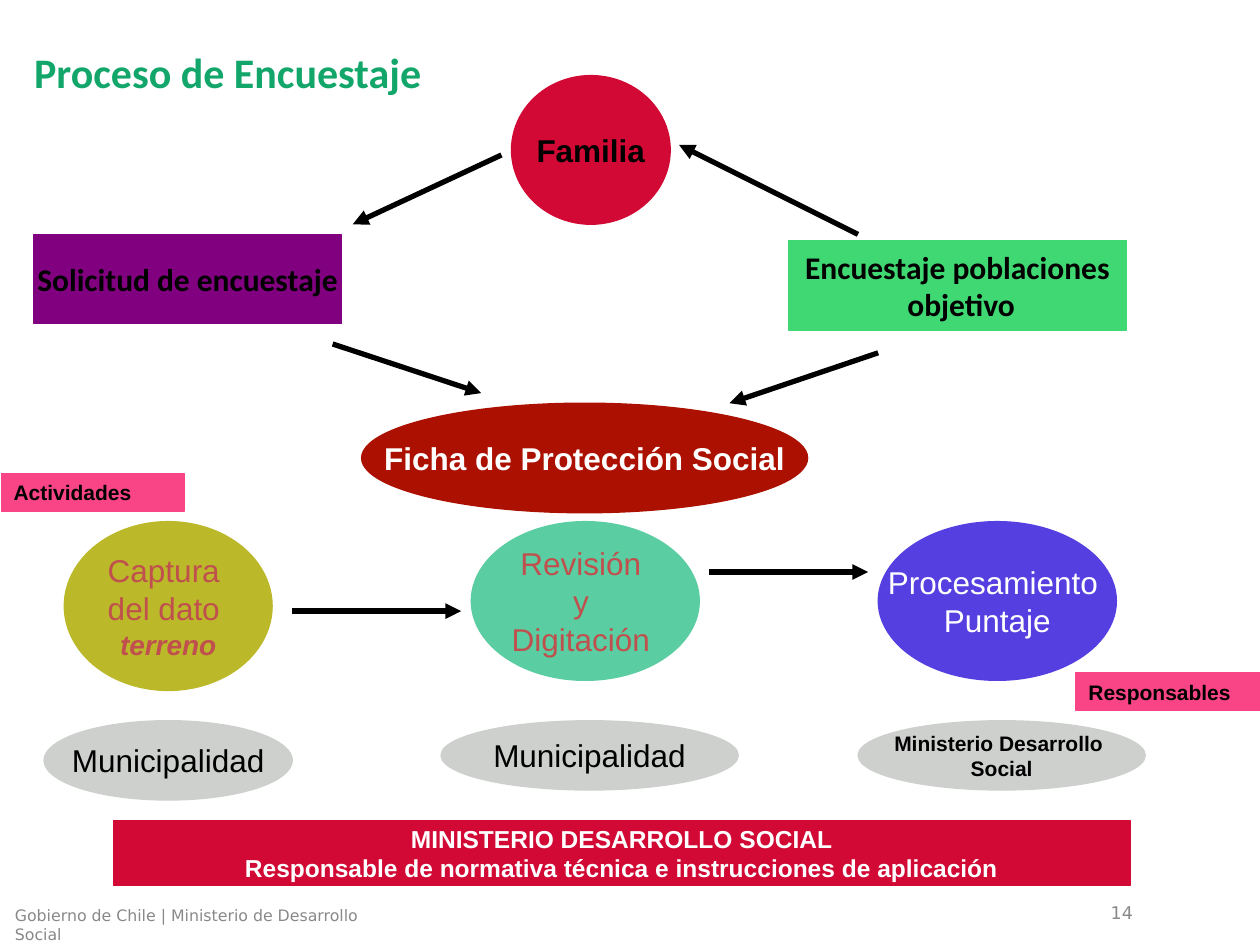
import lxml.etree
import pptx
import pptx.dml.color
import pptx.enum.shapes
import pptx.enum.text
import pptx.oxml.ns
import pptx.util
from pptx.util import Inches

ALIGN = pptx.enum.text.PP_ALIGN
ANCHOR = pptx.enum.text.MSO_ANCHOR
SHAPES = pptx.enum.shapes.MSO_SHAPE


def color(hex_string):
    return pptx.dml.color.RGBColor.from_string(hex_string)


def write(shape, lines, size, font, text_color, bold=False, align=ALIGN.CENTER,
          anchor=ANCHOR.MIDDLE, wrap=False):
    frame = shape.text_frame
    frame.word_wrap = wrap
    frame.vertical_anchor = anchor
    for index, line in enumerate(lines):
        paragraph = frame.add_paragraph() if index else frame.paragraphs[0]
        paragraph.alignment = align
        run = paragraph.add_run()
        run.text = line
        run.font.size = pptx.util.Pt(size)
        run.font.name = font
        run.font.bold = bold
        run.font.color.rgb = color(text_color)


presentation = pptx.Presentation()
presentation.slide_width = Inches(10)
presentation.slide_height = Inches(7.5)
slide = presentation.slides.add_slide(presentation.slide_layouts[5])

footer = slide.shapes.add_textbox(Inches(0.02), Inches(7.14), Inches(3.17), Inches(0.27))
write(footer, ["Gobierno de Chile | Ministerio de Desarrollo Social"], 9, "DejaVu Sans",
      "898989", align=ALIGN.LEFT, anchor=ANCHOR.TOP, wrap=True)
page_number = slide.shapes.add_textbox(Inches(6.76), Inches(7.14), Inches(2.33), Inches(0.21))
write(page_number, ["14"], 10, "DejaVu Sans", "898989", align=ALIGN.RIGHT, wrap=True)

title = slide.shapes.title
title.left, title.top = Inches(0.17), Inches(0.32)
title.width, title.height = Inches(8.93), Inches(0.51)
write(title, ["Proceso de Encuestaje"], 24, "Calibri", "12A66A", bold=True,
      align=ALIGN.LEFT, anchor=ANCHOR.TOP, wrap=True)

oval, box = SHAPES.OVAL, SHAPES.RECTANGLE
nodes = [
    (box, 0.27, 1.86, 2.44, 0.71, "800080",
     ["Solicitud de encuestaje"], 18, "Calibri", "000000", True),
    (oval, 2.87, 3.2, 3.54, 0.87, "AC1000",
     ["Ficha de Protección Social"], 18, "Arial", "FFFFFF", True),
    (oval, 0.51, 4.14, 1.65, 1.34, "BBB82A",
     ["Captura ", "del dato ", "terreno"], 18, "Arial", "C0504D", False),
    (oval, 3.74, 4.14, 1.81, 1.26, "5BCDA2",
     ["Revisión ", "y ", "Digitación "], 18, "Arial", "C0504D", False),
    (oval, 6.97, 4.14, 1.89, 1.26, "563FE1",
     ["Procesamiento ", "Puntaje"], 18, "Arial", "FFFFFF", False),
    (oval, 0.35, 5.72, 1.97, 0.63, "CED0CE",
     ["Municipalidad"], 18, "Arial", "000000", False),
    (oval, 3.5, 5.72, 2.36, 0.55, "CED0CE",
     ["Municipalidad"], 18, "Arial", "000000", False),
    (oval, 6.81, 5.72, 2.28, 0.55, "CED0CE",
     ["Ministerio Desarrollo ", "Social"], 12, "Arial", "000000", True),
    (box, 0.9, 6.51, 8.07, 0.52, "D10934",
     ["MINISTERIO DESARROLLO SOCIAL",
      "Responsable de normativa técnica e instrucciones de aplicación"],
     14, "Arial", "FFFFFF", True),
    (oval, 4.06, 0.6, 1.26, 1.18, "D10934",
     ["Familia"], 18, "Arial", "000000", True),
    (box, 6.26, 1.91, 2.68, 0.71, "40D873",
     ["Encuestaje poblaciones", " objetivo"], 18, "Calibri", "000000", True),
    (box, 0.01, 3.76, 1.45, 0.3, "F94585",
     ["Actividades"], 12, "Arial", "000000", True),
    (box, 8.54, 5.34, 1.46, 0.3, "F94585",
     ["Responsables"], 12, "Arial", "000000", True),
]
for kind, left, top, width, height, fill, lines, size, font, text_color, bold in nodes:
    node = slide.shapes.add_shape(
        kind, Inches(left), Inches(top), Inches(width), Inches(height))
    node.shadow.inherit = False
    node.fill.solid()
    node.fill.fore_color.rgb = color(fill)
    node.line.color.rgb = color(fill)
    node.line.width = pptx.util.Pt(0.75)
    is_label = fill == "F94585"
    write(node, lines, size, font, text_color, bold, wrap=is_label,
          align=ALIGN.LEFT if is_label else ALIGN.CENTER)
    if lines[-1] == "terreno":
        place_font = node.text_frame.paragraphs[-1].runs[0].font
        place_font.size = pptx.util.Pt(16)
        place_font.bold = place_font.italic = True

arrows = [
    (3.98, 1.23, 2.8, 1.78),
    (6.81, 1.86, 5.39, 1.15),
    (2.64, 2.73, 3.82, 3.12),
    (6.97, 2.8, 5.79, 3.2),
    (2.32, 4.85, 3.66, 4.85),
    (5.63, 4.54, 6.89, 4.54),
]
for points in arrows:
    arrow = slide.shapes.add_connector(
        pptx.enum.shapes.MSO_CONNECTOR.STRAIGHT, *[Inches(point) for point in points])
    arrow.line.color.rgb = color("000000")
    arrow.line.width = pptx.util.Pt(3)
    tail = lxml.etree.SubElement(arrow.line._get_or_add_ln(), pptx.oxml.ns.qn("a:tailEnd"))
    tail.set("type", "triangle")
    lxml.etree.SubElement(arrow.element.spPr, pptx.oxml.ns.qn("a:effectLst"))

presentation.save("out.pptx")
